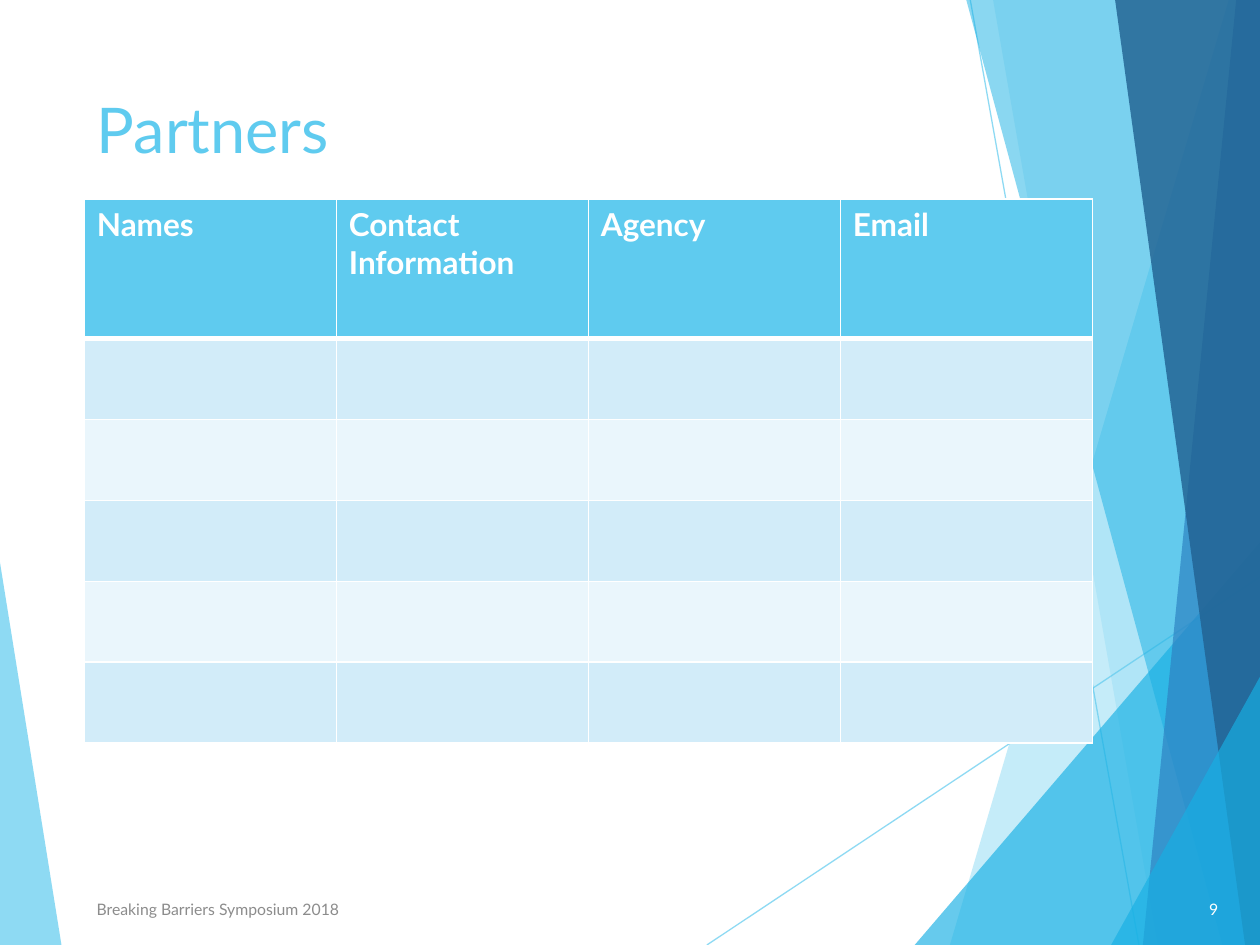
from lxml import etree
from pptx import Presentation
from pptx import util as u
from pptx.dml.color import RGBColor
from pptx.enum import text
from pptx.oxml.ns import qn

Cm, Pt = u.Cm, u.Pt
FONT = "Lato"
COLORS = {
    "sky": "5FCBEF", "cyan": "17B0E4", "blue": "2E83C3", "navy": "226292",
    "white": "FFFFFF", "grey": "8C8C8C", "band_dark": "D2ECF9", "band_light": "EAF6FC",
}
W, H = 25.4, 19.05
EDGE = 25.43

TITLE = "Partners"
FOOTER = "Breaking Barriers Symposium 2018"
NUMBER = "9"
HEADERS = ["Names", "Contact Information", "Agency", "Email"]
BODY_ROWS = 5
COL_W, HEAD_H, ROW_H = 5.08, 2.82, 1.63
LEFT = 1.7

LEFT_FACET = ("sky", 70, [(-0.03, 11.15), (1.24, H), (-0.03, H)])
LINES = [((14.25, H), (EDGE, 11.61)), ((19.56, 0), (22.96, H))]
RIGHT_FACETS = [
    ("sky", 36, [(24.77, 0), (19.15, H), (EDGE, H), (EDGE, 0)]),
    ("sky", 20, [(20.02, 0), (23.34, H), (EDGE, H), (EDGE, 0)]),
    ("cyan", 66, [(18.44, H), (EDGE, 10.9), (EDGE, H)]),
    ("cyan", 50, [(19.48, 0), (24.64, H), (EDGE, H), (EDGE, 0)]),
    ("blue", 70, [(24.92, 0), (23.04, H), (EDGE, H), (EDGE, 0)]),
    ("navy", 82, [(22.48, 0), (25.1, H), (EDGE, H), (EDGE, 0)]),
    ("cyan", 66, [(22.4, H), (EDGE, 13.59), (EDGE, H)]),
]


def rgb(name):
    return RGBColor.from_string(COLORS[name])


def set_alpha(sp, percent):
    clr = next(sp._element.spPr.iter(qn("a:srgbClr")))
    etree.SubElement(clr, qn("a:alpha")).set("val", str(percent * 1000))


def add_facet(s, color, alpha, points):
    pts = [(Cm(x), Cm(y)) for x, y in points]
    builder = s.shapes.build_freeform(*pts[0], scale=1.0)
    builder.add_line_segments(pts[1:], close=True)
    sp = builder.convert_to_shape()
    sp.shadow.inherit = False
    sp.fill.solid()
    sp.fill.fore_color.rgb = rgb(color)
    sp.line.fill.background()
    set_alpha(sp, alpha)


def add_line(s, start, end):
    sp = s.shapes.add_connector(1, *(Cm(v) for v in start + end))
    sp.line.color.rgb = rgb("sky")
    sp.line.width = Pt(0.75)
    set_alpha(sp, 70)
    etree.SubElement(sp._element.spPr, qn("a:effectLst"))


def write(tf, words, size, color, bold=False, align=text.PP_ALIGN.LEFT):
    tf.text = words
    p = tf.paragraphs[0]
    p.alignment = align
    font = p.runs[0].font
    font.name, font.size, font.bold = FONT, Pt(size), bold
    font.color.rgb = rgb(color)


def add_label(s, words, left, width, color, align):
    sp = s.shapes.add_textbox(Cm(left), Cm(17.81), Cm(width), Cm(1.02))
    tf = sp.text_frame
    tf.word_wrap = True
    tf.vertical_anchor = text.MSO_ANCHOR.MIDDLE
    write(tf, words, 9, color, align=align)


def format_cell(cell, fill, bottom):
    pr = cell._tc.get_or_add_tcPr()
    for side, width in (("L", 1), ("R", 1), ("T", 1), ("B", bottom)):
        ln = etree.SubElement(pr, qn("a:ln" + side), w=str(Pt(width)))
        solid = etree.SubElement(ln, qn("a:solidFill"))
        etree.SubElement(solid, qn("a:srgbClr"), val=COLORS["white"])
    cell.fill.solid()
    cell.fill.fore_color.rgb = rgb(fill)


def add_partner_table(s):
    n = len(HEADERS)
    table = s.shapes.add_table(
        BODY_ROWS + 1, n, Cm(LEFT), Cm(4.01),
        Cm(COL_W * n), Cm(HEAD_H + ROW_H * BODY_ROWS)).table
    for col in table.columns:
        col.width = Cm(COL_W)
    for i, row in enumerate(table.rows):
        row.height = Cm(ROW_H if i else HEAD_H)
        fill = ("band_dark" if i % 2 else "band_light") if i else "sky"
        for cell in row.cells:
            format_cell(cell, fill, 1 if i else 3)
    for cell, words in zip(table.rows[0].cells, HEADERS):
        write(cell.text_frame, words, 18, "white", bold=True)
    for cell in table.rows[1].cells:
        cell._tc.tcPr.find(qn("a:lnT")).set("w", str(Pt(3)))


def main():
    prs = Presentation()
    prs.slide_width, prs.slide_height = Cm(W), Cm(H)
    s = prs.slides.add_slide(prs.slide_layouts[5])
    add_facet(s, *LEFT_FACET)
    for start, end in LINES:
        add_line(s, start, end)
    for facet in RIGHT_FACETS:
        add_facet(s, *facet)

    title = s.shapes.title
    s.shapes._spTree.append(title._element)
    title.left, title.top, title.width, title.height = Cm(LEFT), Cm(1.7), Cm(17.63), Cm(2)
    tf = title.text_frame
    tf.auto_size = text.MSO_AUTO_SIZE.NONE
    tf.vertical_anchor = text.MSO_ANCHOR.TOP
    write(tf, TITLE, 36, "sky")

    add_partner_table(s)
    add_label(s, FOOTER, LEFT, 12.85, "grey", text.PP_ALIGN.LEFT)
    add_label(s, NUMBER, 23.39, 1.42, "white", text.PP_ALIGN.RIGHT)
    prs.save("out.pptx")


if __name__ == "__main__":
    main()
